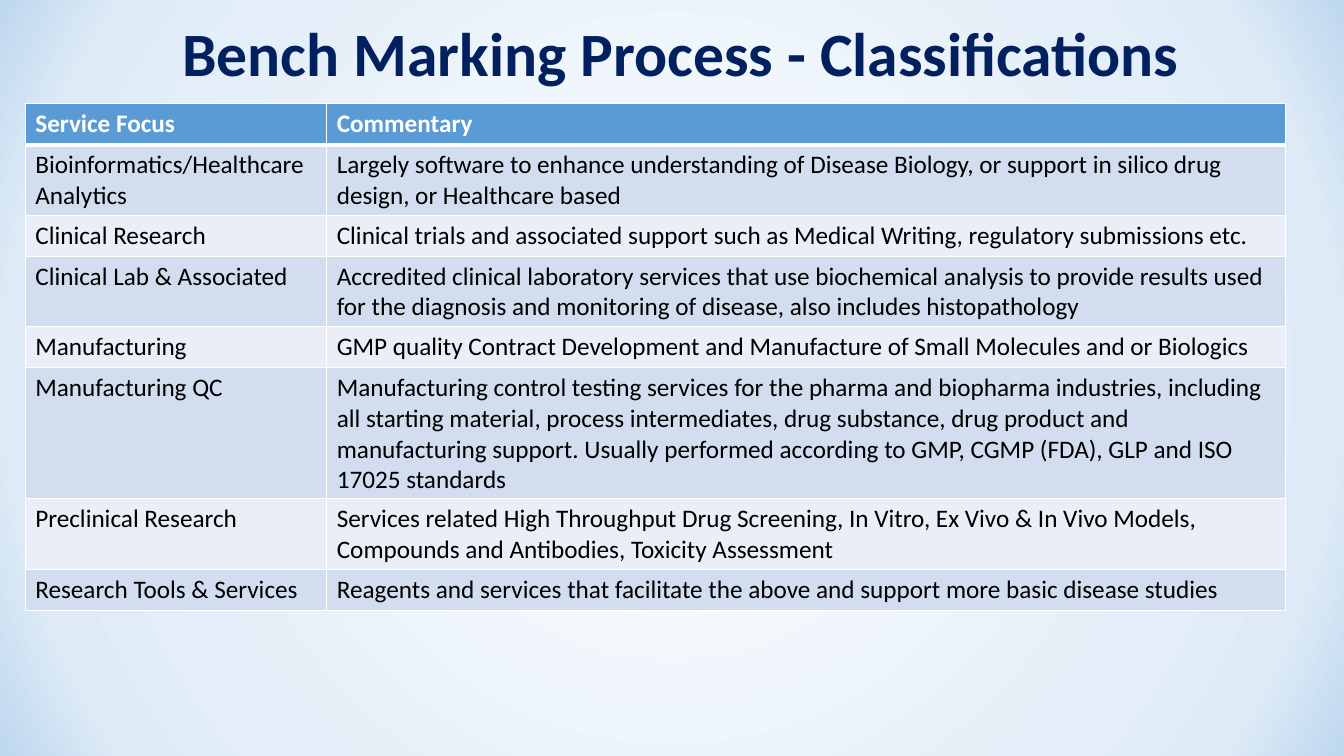
from pptx import Presentation
from pptx.dml.color import RGBColor
from pptx.enum.text import MSO_ANCHOR as Anchor, PP_ALIGN as Align
from pptx.oxml import parse_xml
from pptx.oxml.ns import nsdecls
from pptx.util import Inches, Pt

COLORS = {
    "navy": "002060", "white": "FFFFFF", "black": "000000",
    "header": "5B9BD5", "band_dark": "D2DEEF", "band_light": "EAEFF7",
    "glow": "F7FAFD", "haze": "DEEBF7", "edge": "BDD7EE",
}

CLASSIFICATIONS = [
    ("Service Focus", "Commentary"),
    ("Bioinformatics/Healthcare Analytics",
     "Largely software to enhance understanding of Disease Biology, or support "
     "in silico drug design, or Healthcare based"),
    ("Clinical Research",
     "Clinical trials and associated support such as Medical Writing, "
     "regulatory submissions etc."),
    ("Clinical Lab & Associated",
     "Accredited clinical laboratory services that use biochemical analysis to "
     "provide results used for the diagnosis and monitoring of disease, also "
     "includes histopathology"),
    ("Manufacturing",
     "GMP quality Contract Development and Manufacture of Small Molecules and "
     "or Biologics"),
    ("Manufacturing QC",
     "Manufacturing control testing services for the pharma and biopharma "
     "industries, including all starting material, process intermediates, drug "
     "substance, drug product and manufacturing support. Usually performed "
     "according to GMP, CGMP (FDA), GLP and ISO 17025 standards"),
    ("Preclinical Research",
     "Services related High Throughput Drug Screening, In Vitro, Ex Vivo & In "
     "Vivo Models, Compounds and Antibodies, Toxicity Assessment"),
    ("Research Tools & Services",
     "Reagents and services that facilitate the above and support more basic "
     "disease studies"),
]


class SlideBuilder:
    """Draws on one slide; lengths are columns and rows of a 100 x 100 grid."""

    font_name = "Calibri"

    def __init__(self, deck):
        self.column = deck.slide_width / 100
        self.row = deck.slide_height / 100
        self.slide = deck.slides.add_slide(deck.slide_layouts[6])

    def across(self, columns):
        return round(columns * self.column)

    def down(self, rows):
        return round(rows * self.row)

    def place(self, left, top, width, height):
        return self.across(left), self.down(top), self.across(width), self.down(height)

    def style(self, paragraph, size, color, bold=False):
        font = paragraph.font
        font.name, font.size, font.bold = self.font_name, Pt(size), bold
        font.color.rgb = RGBColor.from_string(COLORS[color])

    def radial_background(self, stops):
        """Fill the background with a gradient spreading from the centre."""
        marks = "".join(
            f'<a:gs pos="{percent * 1000}"><a:srgbClr val="{COLORS[color]}"/></a:gs>'
            for percent, color in stops)
        self.slide.element.cSld.insert(0, parse_xml(
            f'<p:bg {nsdecls("p", "a")}><p:bgPr><a:gradFill rotWithShape="1">'
            f'<a:gsLst>{marks}</a:gsLst><a:path path="circle">'
            '<a:fillToRect l="50000" t="50000" r="50000" b="50000"/></a:path>'
            '</a:gradFill><a:effectLst/></p:bgPr></p:bg>'))

    def title(self, text, *area):
        frame = self.slide.shapes.add_textbox(*self.place(*area)).text_frame
        frame.word_wrap = True
        frame.vertical_anchor = Anchor.MIDDLE
        heading = frame.paragraphs[0]
        heading.text = text
        heading.alignment = Align.CENTER
        heading.line_spacing = 0.9
        self.style(heading, 44, "navy", bold=True)

    def table(self, entries, left, top, widths, row_height):
        area = self.place(left, top, sum(widths), row_height * len(entries))
        table = self.slide.shapes.add_table(len(entries), len(widths), *area).table
        for column, width in zip(table.columns, widths):
            column.width = self.across(width)
        for index, entry in enumerate(entries):
            table.rows[index].height = self.down(row_height)
            for cell, text in zip(table.rows[index].cells, entry):
                self.fill_cell(cell, text, index)

    def fill_cell(self, cell, text, index):
        is_header = index == 0
        band = "header" if is_header else "band_dark" if index % 2 else "band_light"
        cell.text = text
        self.style(cell.text_frame.paragraphs[0], 18,
                   "white" if is_header else "black", bold=is_header)
        cell.fill.solid()
        cell.fill.fore_color.rgb = RGBColor.from_string(COLORS[band])
        self.border(cell, top=3 if index == 1 else 1, bottom=3 if is_header else 1)

    def border(self, cell, top, bottom):
        properties = cell._tc.get_or_add_tcPr()
        edges = [("L", 1), ("R", 1), ("T", top), ("B", bottom)]
        for position, (side, points) in enumerate(edges):
            properties.insert(position, parse_xml(
                f'<a:ln{side} {nsdecls("a")} w="{Pt(points)}"><a:solidFill>'
                f'<a:srgbClr val="{COLORS["white"]}"/></a:solidFill></a:ln{side}>'))


def main():
    deck = Presentation()
    deck.slide_width, deck.slide_height = Inches(13.33), Inches(7.5)
    builder = SlideBuilder(deck)
    builder.radial_background([(20, "glow"), (86, "haze"), (100, "edge")])
    builder.title("Bench Marking Process - Classifications", 4.05, 2.4, 93.3, 10.27)
    builder.table(CLASSIFICATIONS, left=1.88, top=13.73,
                  widths=(22.43, 71.34), row_height=5.41)
    deck.save("out.pptx")


if __name__ == "__main__":
    main()
